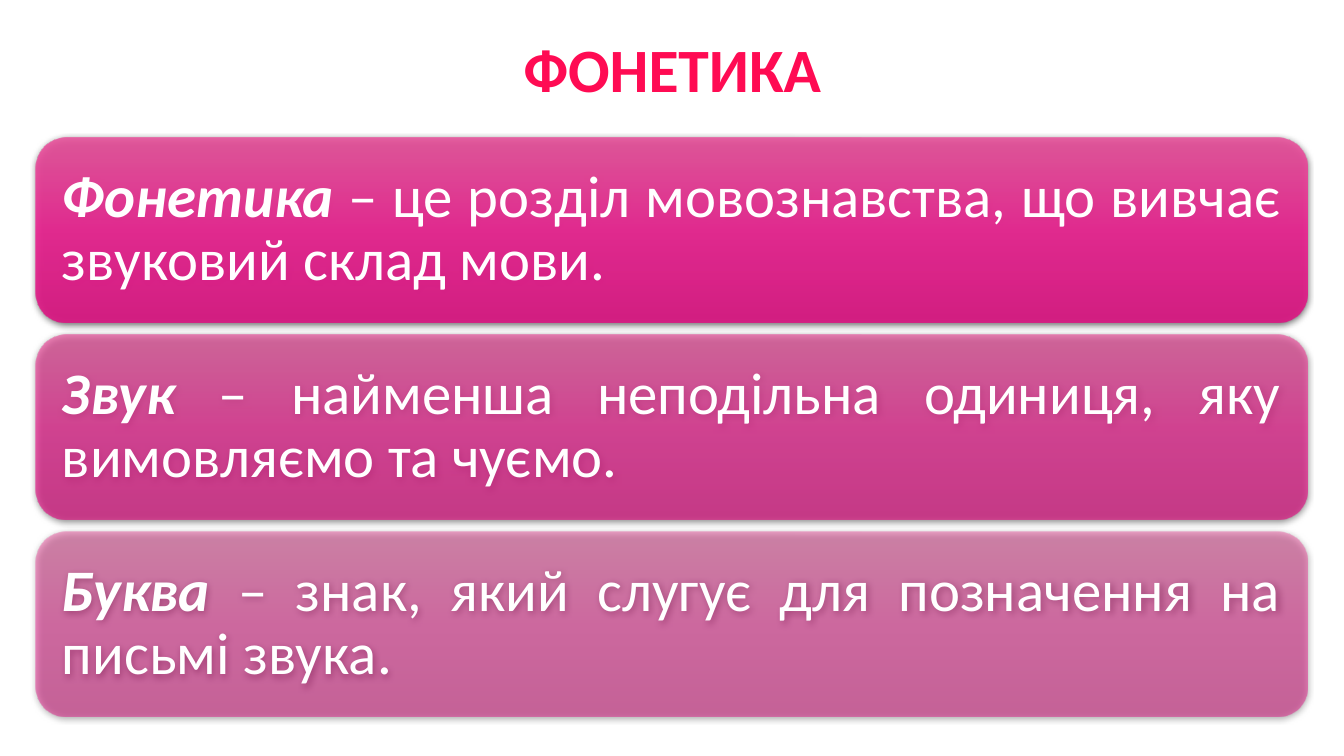
"""Build the slide on phonetics: a title over three definition cards."""
from lxml import etree
from pptx import Presentation
from pptx.dml.color import RGBColor
from pptx.enum.shapes import MSO_SHAPE
from pptx.enum.text import MSO_ANCHOR, PP_ALIGN
from pptx.oxml import parse_xml
from pptx.oxml.ns import qn
from pptx.util import Pt

MIDDLE = MSO_ANCHOR.MIDDLE
CENTER, JUSTIFY = PP_ALIGN.CENTER, PP_ALIGN.JUSTIFY
ROUNDED = MSO_SHAPE.ROUNDED_RECTANGLE

TITLE = "ФОНЕТИКА"
CARDS = [
    ("Фонетика", " – це розділ мовознавства, що вивчає звуковий склад мови.", 90),
    ("Звук", " – найменша неподільна одиниця, яку вимовляємо та чуємо.", 70),
    ("Буква", " – знак, який слугує для позначення на письмі звука.", 50),
]

COLORS = {"title": "FF0B53", "text": "FFFFFF", "top": "E8559D",
          "mid": "EC2492", "bottom": "DC1683", "shadow": "000000"}
STOPS = [(0, "top"), (50, "mid"), (100, "bottom")]
FONT = "Calibri"
NS = 'xmlns:a="http://schemas.openxmlformats.org/drawingml/2006/main"'

SLIDE_W, SLIDE_H = 1344, 756
TITLE_BOX = (93, 0, 1159, 146)
CARD_X, CARD_Y, CARD_W, CARD_H, CARD_STEP = 36, 138, 1271, 184, 197
CARD_INSET = 17


def px(n):
    return round(n * 914400 / 100.8)


def color_xml(name, alpha):
    return (f'<a:srgbClr val="{COLORS[name]}">'
            f'<a:alpha val="{alpha * 1000}"/></a:srgbClr>')


def set_gradient(sp, alpha):
    stops = "".join(f'<a:gs pos="{pos * 1000}">{color_xml(name, alpha)}</a:gs>'
                    for pos, name in STOPS)
    sp.fill.gradient()
    old = sp._element.spPr.find(qn("a:gradFill"))
    old.getparent().replace(old, parse_xml(
        f'<a:gradFill {NS} rotWithShape="1"><a:gsLst>{stops}</a:gsLst>'
        '<a:lin ang="5400000" scaled="0"/></a:gradFill>'))


def set_shadow(sp):
    sp.shadow.inherit = False
    effects = sp._element.spPr.find(qn("a:effectLst"))
    shadow = etree.SubElement(
        effects, qn("a:outerShdw"), blurRad=str(Pt(4.5)), dist=str(Pt(1.5)),
        dir="5400000", algn="ctr", rotWithShape="0")
    color = etree.SubElement(shadow, qn("a:srgbClr"), val=COLORS["shadow"])
    etree.SubElement(color, qn("a:alpha"), val="63000")


def write(sp, runs, size, color, align):
    tf = sp.text_frame
    tf.word_wrap = True
    tf.vertical_anchor = MIDDLE
    p = tf.paragraphs[0]
    p.alignment = align
    p.line_spacing = 0.9
    for text, bold, italic in runs:
        r = p.add_run()
        r.text = text
        r.font.name = FONT
        r.font.size = Pt(size)
        r.font.bold = bold
        r.font.italic = italic
        r.font.color.rgb = RGBColor.from_string(COLORS[color])
    return tf


def add_card(s, index, term, meaning, alpha):
    box = (CARD_X, CARD_Y + index * CARD_STEP, CARD_W, CARD_H)
    sp = s.shapes.add_shape(ROUNDED, *map(px, box))
    set_gradient(sp, alpha)
    sp.line.fill.background()
    set_shadow(sp)
    runs = [(term, True, True), (meaning, False, False)]
    tf = write(sp, runs, 42, "text", JUSTIFY)
    tf.margin_left = tf.margin_right = px(CARD_INSET)
    tf.margin_top = tf.margin_bottom = px(CARD_INSET)


def main():
    prs = Presentation()
    prs.slide_width, prs.slide_height = px(SLIDE_W), px(SLIDE_H)
    s = prs.slides.add_slide(prs.slide_layouts[6])
    title = s.shapes.add_textbox(*map(px, TITLE_BOX))
    write(title, [(TITLE, True, False)], 44, "title", CENTER)
    for index, card in enumerate(CARDS):
        add_card(s, index, *card)
    prs.save("out.pptx")


if __name__ == "__main__":
    main()
